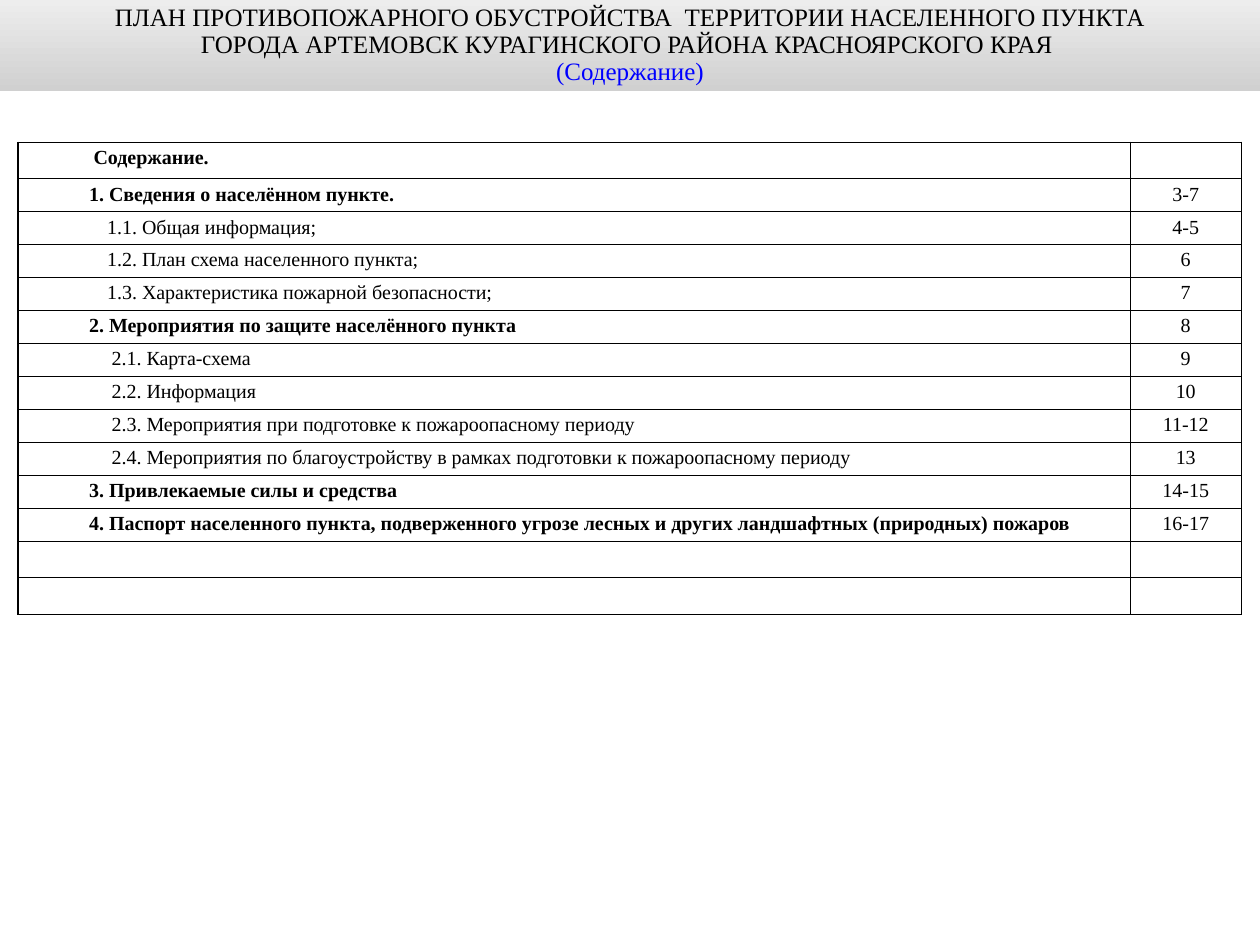
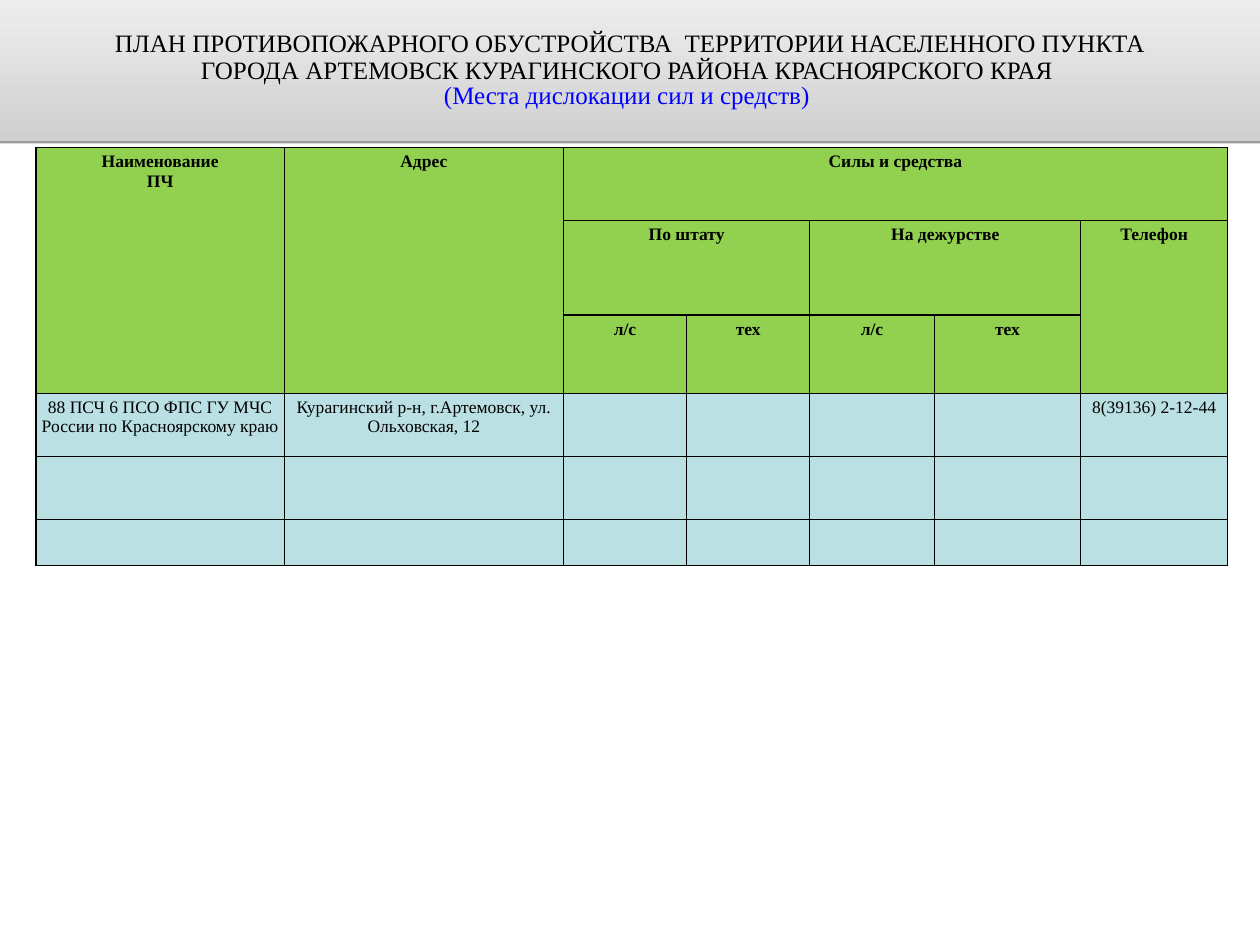
from dataclasses import dataclass
from typing import NamedTuple

from lxml import etree
from pptx import Presentation
from pptx import util as u
from pptx.dml.color import RGBColor
from pptx.enum import shapes, text
from pptx.oxml import ns


@dataclass(frozen=True)
class Theme:
    font: str = "Times New Roman"
    black: str = "000000"
    blue: str = "0000FF"
    band_dark: str = "D0D0D0"
    band_light: str = "EDEDED"
    green: str = "92D050"
    pale_blue: str = "BBE0E3"
    title_size: float = 20
    contents_size: float = 16
    forces_size: float = 14
    border: float = 0.96


THEME = Theme()
WIDTH, HEIGHT = 14, 10.5
PLAN_TITLE = (
    "ПЛАН ПРОТИВОПОЖАРНОГО ОБУСТРОЙСТВА  ТЕРРИТОРИИ НАСЕЛЕННОГО ПУНКТА",
    "ГОРОДА АРТЕМОВСК КУРАГИНСКОГО РАЙОНА КРАСНОЯРСКОГО КРАЯ ",
)


class Band(NamedTuple):
    subtitle: str
    top: float
    height: float
    anchor: text.MSO_ANCHOR
    subtitle_spacing: float
    shadow: bool


class Entry(NamedTuple):
    title: str
    pages: str
    margin: float
    indent: float
    bold: bool = False


class Head(NamedTuple):
    title: str
    row: int
    col: int
    rows: int = 1
    cols: int = 1


def section(title: str, pages: str) -> Entry:
    return Entry(title, pages, 0.19, 0.5, True)


def topic(title: str, pages: str) -> Entry:
    return Entry(title, pages, 0.39, 0.5)


def measure(title: str, pages: str) -> Entry:
    return Entry(title, pages, 0, 0.94)


CONTENTS = [
    Entry("Содержание.", "", 0.19, 0.55, True),
    section("1. Сведения о населённом пункте.", "3-7"),
    topic("1.1. Общая информация;", "4-5"),
    topic("1.2. План схема населенного пункта;", "6"),
    topic("1.3. Характеристика пожарной безопасности;", "7"),
    section("2. Мероприятия по защите населённого пункта", "8"),
    measure("2.1. Карта-схема", "9"),
    measure("2.2. Информация", "10"),
    measure("2.3. Мероприятия при подготовке к пожароопасному периоду", "11-12"),
    measure("2.4. Мероприятия по благоустройству в рамках подготовки к "
            "пожароопасному периоду", "13"),
    section("3. Привлекаемые силы и средства", "14-15"),
    section("4. Паспорт населенного пункта, подверженного угрозе лесных и других "
            "ландшафтных (природных) пожаров", "16-17"),
    Entry("", "", 0, 0),
    Entry("", "", 0, 0),
]

FORCES_HEADS = [
    Head("Наименование\nПЧ", 0, 0, rows=3),
    Head("Адрес", 0, 1, rows=3),
    Head("Силы и средства", 0, 2, cols=5),
    Head("По штату", 1, 2, cols=2),
    Head("На дежурстве", 1, 4, cols=2),
    Head("Телефон", 1, 6, rows=2),
    *(Head(name, 2, 2 + i) for i, name in enumerate(["л/с", "тех"] * 2)),
]
FORCES_HEAD_ROWS = 3
FIRE_STATION = {
    0: "88 ПСЧ 6 ПСО ФПС ГУ МЧС России по Красноярскому краю",
    1: "Курагинский р-н, г.Артемовск, ул. Ольховская, 12",
    6: "8(39136) 2-12-44",
}


def rgb(color: str) -> RGBColor:
    return RGBColor.from_string(color)


def style_runs(p, size: float, color: str = THEME.black, bold: bool = False) -> None:
    for r in p.runs:
        r.font.name = THEME.font
        r.font.size = u.Pt(size)
        r.font.bold = bold
        r.font.color.rgb = rgb(color)


def add_bottom_shadow(sp) -> None:
    effects = sp._element.spPr.find(ns.qn("a:effectLst"))
    shadow = etree.SubElement(effects, ns.qn("a:outerShdw"), blurRad="0",
                              dist=str(u.Pt(1.6)), dir="5400000", rotWithShape="0")
    color = etree.SubElement(shadow, ns.qn("a:srgbClr"), val=THEME.black)
    etree.SubElement(color, ns.qn("a:alpha"), val="38000")


def add_band(s, band: Band) -> None:
    """Grey title band with the plan name and a blue subtitle."""
    sp = s.shapes.add_shape(shapes.MSO_SHAPE.RECTANGLE, 0, u.Inches(band.top),
                            u.Inches(WIDTH), u.Inches(band.height))
    sp.line.fill.background()
    sp.shadow.inherit = False
    if band.shadow:
        add_bottom_shadow(sp)
    sp.fill.gradient()
    sp.fill.gradient_angle = 90
    for stop, color in zip(sp.fill.gradient_stops, (THEME.band_dark, THEME.band_light)):
        stop.color.rgb = rgb(color)

    tf = sp.text_frame
    tf.word_wrap = True
    tf.vertical_anchor = band.anchor
    tf.text = "\n".join((*PLAN_TITLE, band.subtitle))
    for p in tf.paragraphs:
        p.alignment = text.PP_ALIGN.CENTER
        p.line_spacing = 0.9
        style_runs(p, THEME.title_size)
    p = tf.paragraphs[-1]
    p.line_spacing = band.subtitle_spacing
    style_runs(p, THEME.title_size, THEME.blue)


def add_borders(cell) -> None:
    tc_pr = cell._tc.get_or_add_tcPr()
    for i, side in enumerate(("lnL", "lnR", "lnT", "lnB")):
        ln = etree.Element(ns.qn(f"a:{side}"), w=str(u.Pt(THEME.border)))
        fill = etree.SubElement(ln, ns.qn("a:solidFill"))
        etree.SubElement(fill, ns.qn("a:srgbClr"), val=THEME.black)
        tc_pr.insert(i, ln)


def add_grid(s, left: float, top: float, cols: list[float], rows: list[float],
             fills: list[str | None]):
    """Bordered table; fills holds one colour, or None, for each row."""
    table = s.shapes.add_table(len(rows), len(cols), u.Inches(left), u.Inches(top),
                               u.Inches(sum(cols)), u.Inches(sum(rows))).table
    table.first_row = table.horz_banding = False
    for column, width in zip(table.columns, cols):
        column.width = u.Inches(width)
    for row, height, fill in zip(table.rows, rows, fills):
        row.height = u.Inches(height)
        for cell in row.cells:
            if fill:
                cell.fill.solid()
                cell.fill.fore_color.rgb = rgb(fill)
            else:
                cell.fill.background()
            add_borders(cell)
    return table


def set_cell(cell, value: str, size: float, bold: bool = False,
             align=text.PP_ALIGN.CENTER, inset: float = 0.1) -> None:
    cell.margin_left = cell.margin_right = u.Inches(inset)
    cell.text_frame.text = value
    for p in cell.text_frame.paragraphs:
        p.alignment = align
        style_runs(p, size, bold=bold)


def add_contents_slide(prs) -> None:
    s = prs.slides.add_slide(prs.slide_layouts[6])
    add_band(s, Band("(Содержание)", 0, 1.01, text.MSO_ANCHOR.TOP, 0.9, False))

    # Rows without a page number are slightly taller
    tall = 0.4
    plain = (5.23 - 3 * tall) / 11
    rows = [plain if entry.pages else tall for entry in CONTENTS]
    table = add_grid(s, 0.2, 1.58, [12.36, 1.23], rows, [None] * len(rows))
    for i, entry in enumerate(CONTENTS):
        if entry.title:
            cell = table.cell(i, 0)
            set_cell(cell, entry.title, THEME.contents_size, entry.bold,
                     text.PP_ALIGN.LEFT)
            p_pr = cell.text_frame.paragraphs[0]._p.get_or_add_pPr()
            p_pr.set("marL", str(u.Inches(entry.margin)))
            p_pr.set("indent", str(u.Inches(entry.indent)))
        if entry.pages:
            set_cell(table.cell(i, 1), entry.pages, THEME.contents_size)


def add_forces_slide(prs) -> None:
    s = prs.slides.add_slide(prs.slide_layouts[6])
    add_band(s, Band("(Места дислокации сил и средств) ", -0.01, 1.58,
                     text.MSO_ANCHOR.MIDDLE, 0.8, True))

    cols = [2.76, 3.1, 1.37, 1.37, 1.38, 1.63, 1.63]
    rows = [0.81, 1.05, 0.87, 0.7, 0.7, 0.51]
    body_rows = len(rows) - FORCES_HEAD_ROWS
    fills = [THEME.green] * FORCES_HEAD_ROWS + [THEME.pale_blue] * body_rows
    table = add_grid(s, 0.4, 1.64, cols, rows, fills)

    # Merged header
    for head in FORCES_HEADS:
        cell = table.cell(head.row, head.col)
        if head.rows * head.cols > 1:
            cell.merge(table.cell(head.row + head.rows - 1, head.col + head.cols - 1))
        set_cell(cell, head.title, THEME.forces_size, bold=True, inset=0.04)

    # Fire station
    for col, value in FIRE_STATION.items():
        set_cell(table.cell(FORCES_HEAD_ROWS, col), value, THEME.forces_size, inset=0.03)


def main() -> None:
    prs = Presentation()
    prs.slide_width, prs.slide_height = u.Inches(WIDTH), u.Inches(HEIGHT)
    add_contents_slide(prs)
    add_forces_slide(prs)
    prs.save("out.pptx")


if __name__ == "__main__":
    main()
